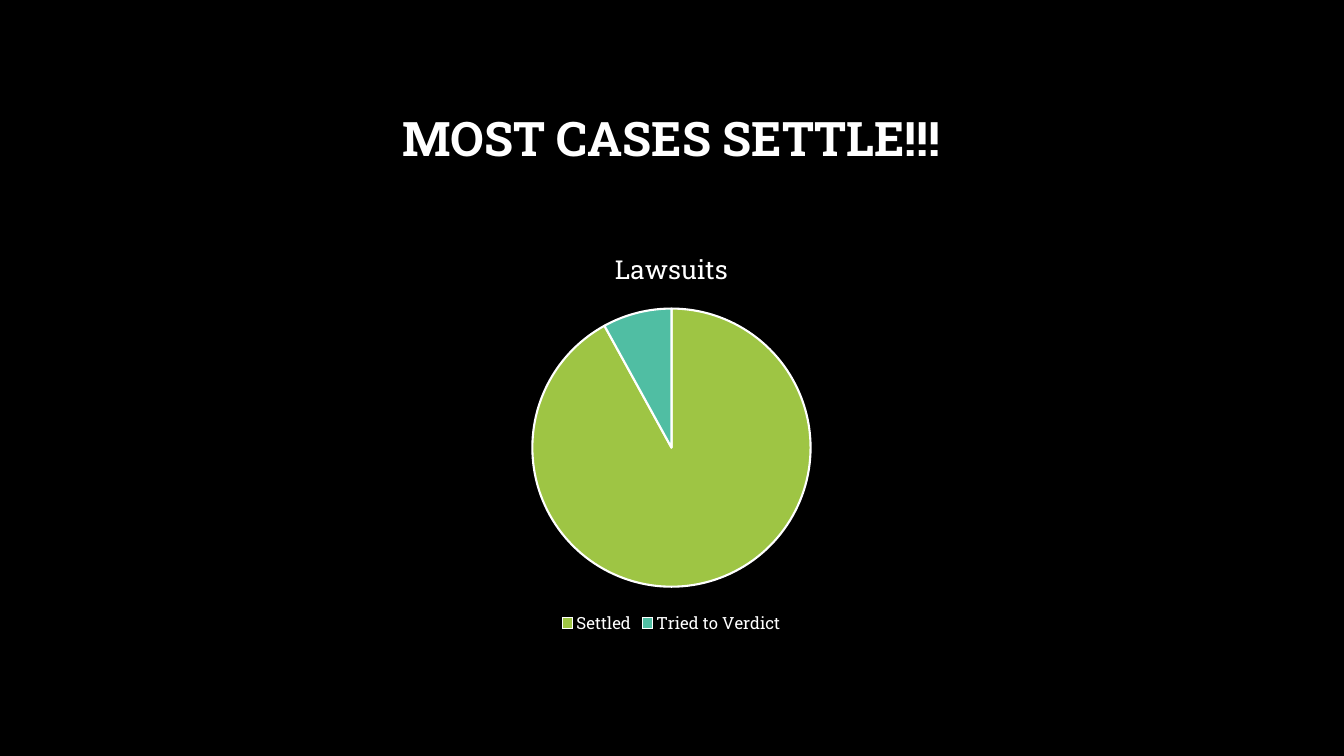
from pptx import Presentation
from pptx.chart.data import CategoryChartData
from pptx.dml.color import RGBColor
from pptx.enum.chart import XL_CHART_TYPE, XL_LEGEND_POSITION
from pptx.enum.text import MSO_ANCHOR, PP_ALIGN
from pptx.util import Inches, Pt

PIE = XL_CHART_TYPE.PIE
BOTTOM = XL_LEGEND_POSITION.BOTTOM
MIDDLE = MSO_ANCHOR.MIDDLE
CENTER = PP_ALIGN.CENTER

HEADLINE = "MOST CASES SETTLE!!!"
CHART_TITLE = "Lawsuits"
OUTCOMES = [("Settled", 92, "9EC544"), ("Tried to Verdict", 8, "50BEA3")]
BACKGROUND, FOREGROUND = "000000", "FFFFFF"
LEFT, WIDTH = 1, 11.32
TITLE_AREA = (LEFT, 0.67, WIDTH, 1.45)
CHART_AREA = (LEFT, 2.29, WIDTH, 4.04)
HEADLINE_FONT = {"size": Pt(34), "bold": True}
CHART_FONT = {"size": Pt(10), "bold": False}
CHART_TITLE_FONT = {"size": Pt(18.6), "bold": False}
LEGEND_FONT = {"size": Pt(12), "bold": False}


def color(value):
    return RGBColor.from_string(value)


def paint(fill, value):
    fill.solid()
    fill.fore_color.rgb = color(value)


def style(font, values):
    for name, value in {"name": "Roboto Slab", **values}.items():
        setattr(font, name, value)
    paint(font.fill, FOREGROUND)


deck = Presentation()
deck.slide_width, deck.slide_height = Inches(13.33), Inches(7.5)
page = deck.slides.add_slide(deck.slide_layouts[5])
paint(page.background.fill, BACKGROUND)

title = page.shapes.title
title.left, title.top, title.width, title.height = map(Inches, TITLE_AREA)
title.text_frame.vertical_anchor = MIDDLE
para = title.text_frame.paragraphs[0]
para.alignment, para.line_spacing = CENTER, 0.9
span = para.add_run()
span.text = HEADLINE
style(span.font, HEADLINE_FONT)

data = CategoryChartData()
data.categories = [name for name, share, fill in OUTCOMES]
data.add_series(CHART_TITLE, [share for name, share, fill in OUTCOMES])
chart = page.shapes.add_chart(PIE, *map(Inches, CHART_AREA), data).chart
style(chart.font, CHART_FONT)

chart.has_title = True
chart_span = chart.chart_title.text_frame.paragraphs[0].add_run()
chart_span.text = CHART_TITLE
style(chart_span.font, CHART_TITLE_FONT)
chart.chart_title.include_in_layout = False

chart.has_legend = True
chart.legend.position = BOTTOM
chart.legend.include_in_layout = False
style(chart.legend.font, LEGEND_FONT)

plot = chart.plots[0]
plot.vary_by_categories = True
for index, (name, share, fill) in enumerate(OUTCOMES):
    wedge = plot.series[0].points[index].format
    paint(wedge.fill, fill)
    paint(wedge.line.fill, FOREGROUND)
    wedge.line.width = Pt(1.5)

deck.save("out.pptx")
